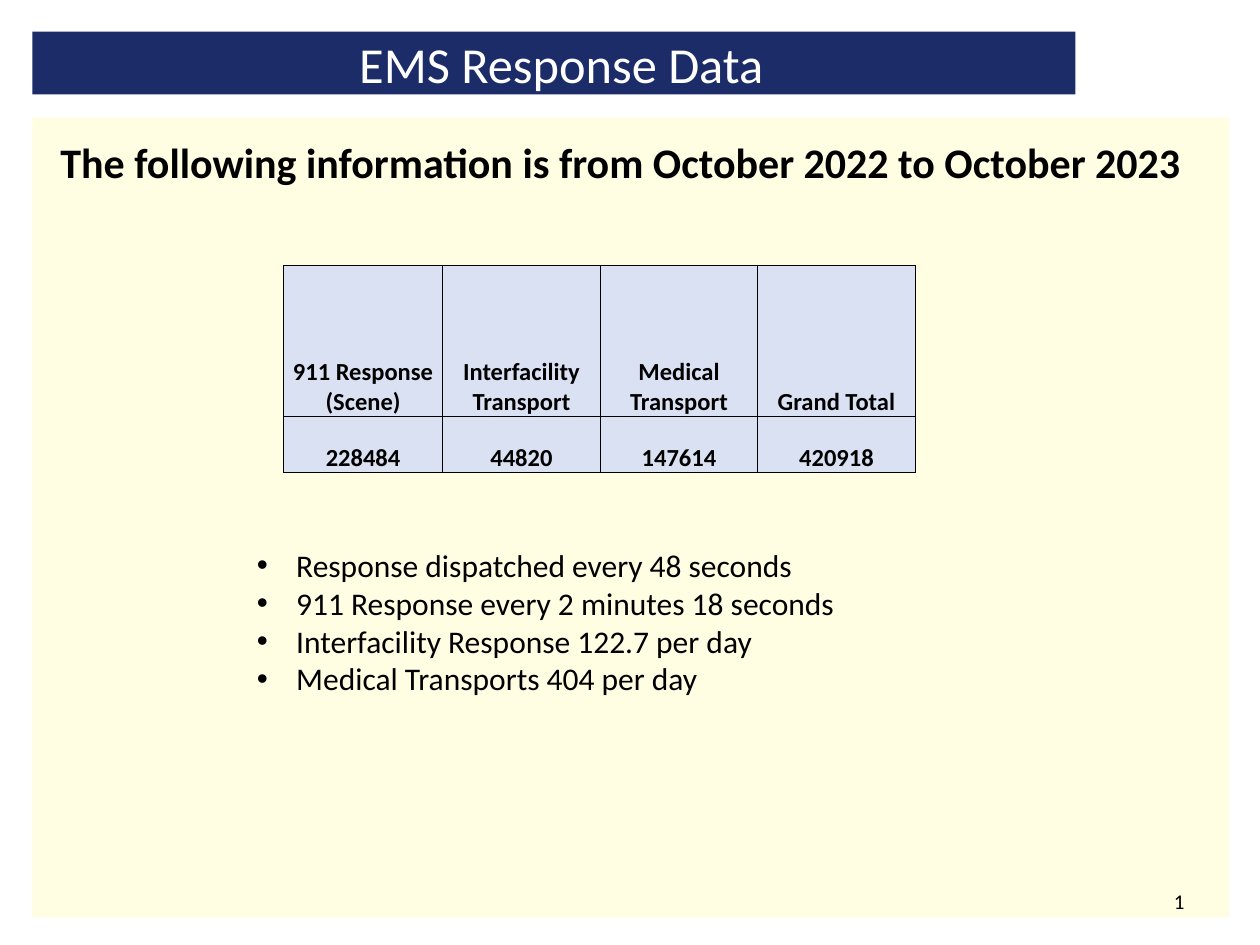
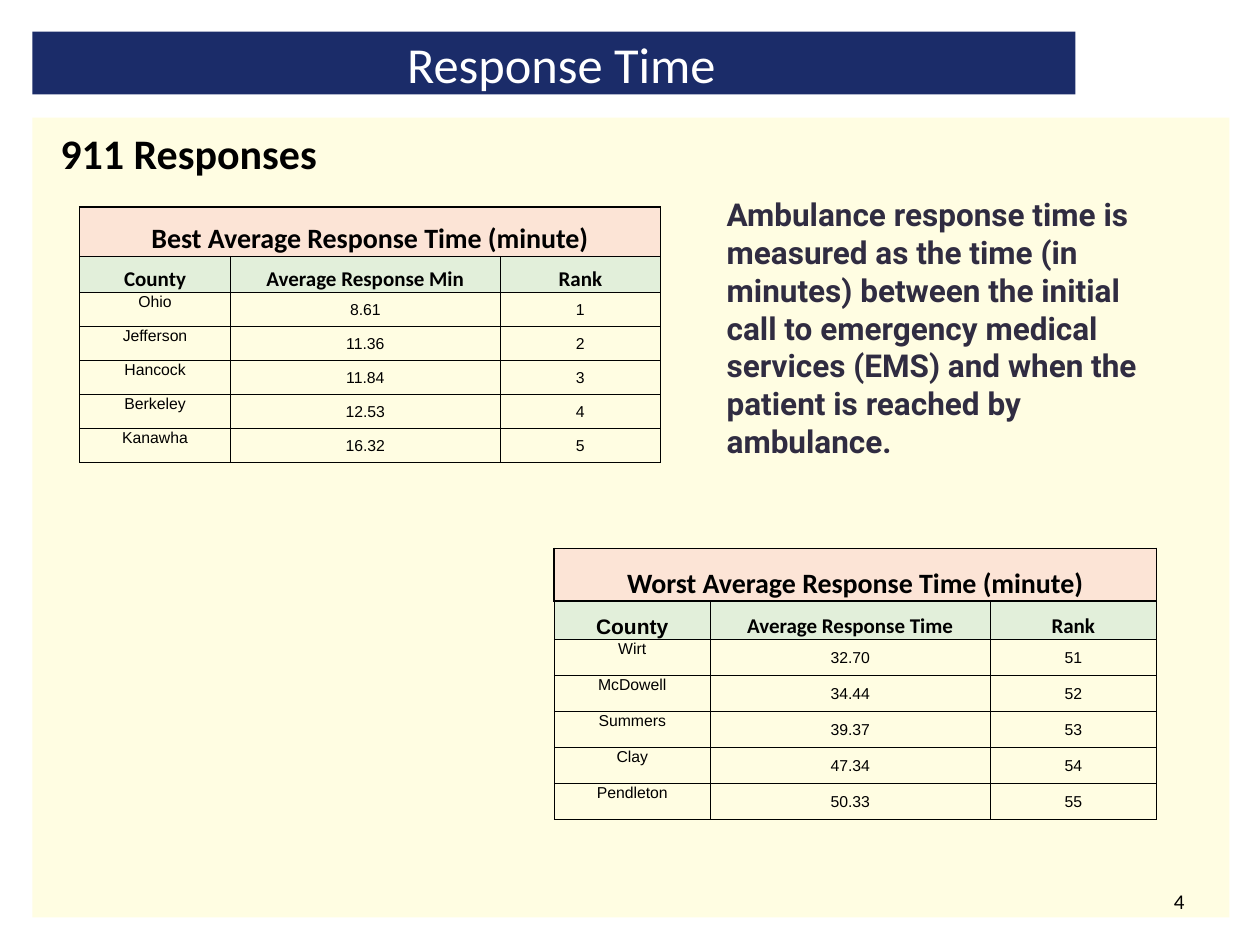
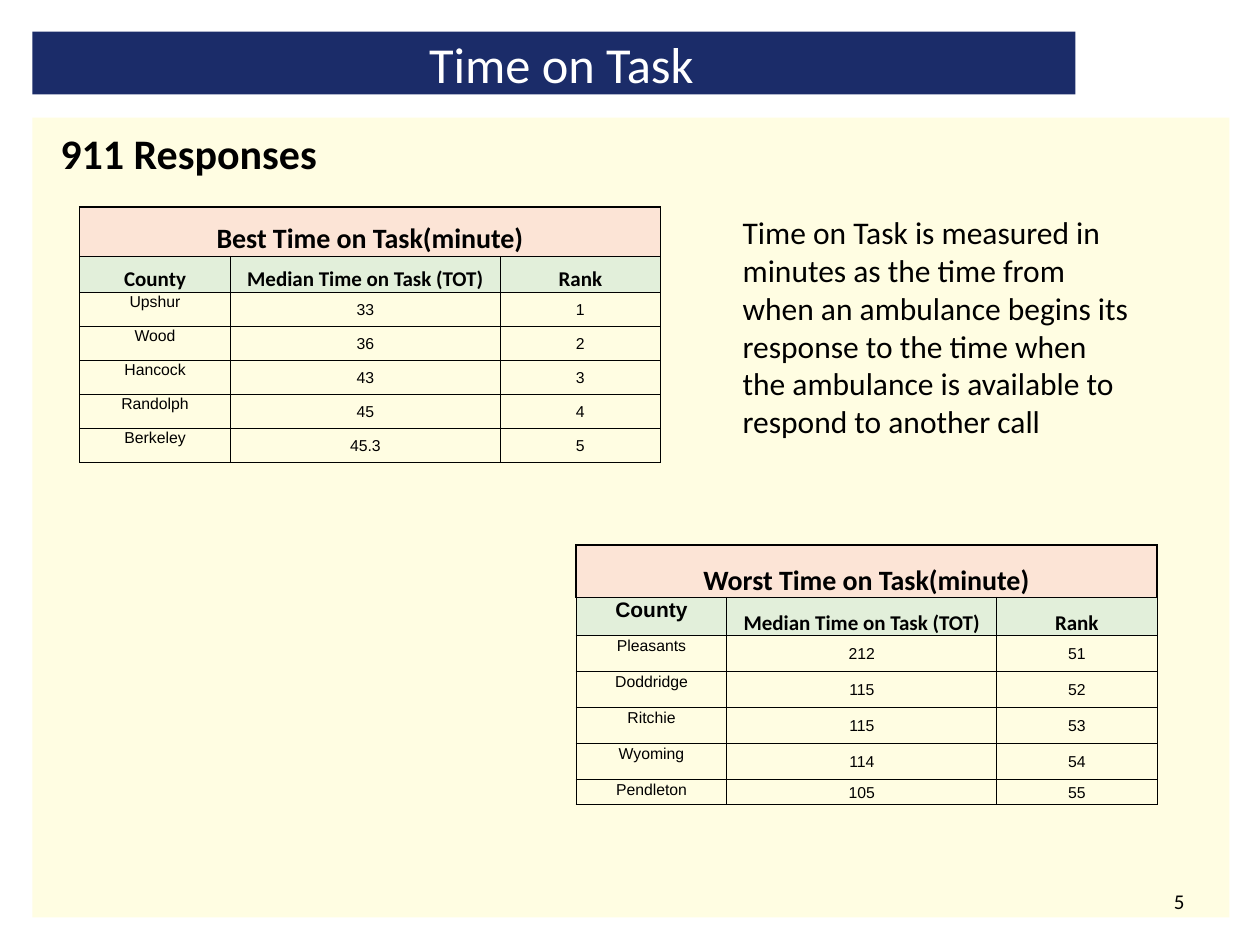
import lxml.etree
import pptx
import pptx.dml.color
import pptx.enum.shapes
import pptx.enum.text
import pptx.oxml.ns
import pptx.util

Pt = pptx.util.Pt
ALIGN = pptx.enum.text.PP_ALIGN
ANCHOR = pptx.enum.text.MSO_ANCHOR

NAVY, CREAM, WHITE, BLACK, INK = "1B2C69", "FFFDE2", "FFFFFF", "000000", "302C41"
TOTALS_BLUE, CAPTION_PEACH, HEADER_GREEN = "D9E1F2", "FCE4D6", "E2EFDA"
THIN, THICK = 0.5, 1


def color(hex_string):
    return pptx.dml.color.RGBColor.from_string(hex_string)


def add_xml(parent, tag, **attributes):
    return lxml.etree.SubElement(parent, pptx.oxml.ns.qn(tag), attributes)


def set_indent(paragraph, left, first_line=0, bullet=None):
    properties = paragraph._p.get_or_add_pPr()
    properties.set("marL", str(Pt(left)))
    properties.set("indent", str(Pt(first_line)))
    if bullet:
        add_xml(properties, "a:buFont", typeface="Arial")
        add_xml(properties, "a:buChar", char=bullet)
    else:
        add_xml(properties, "a:buNone")


def format_text(text_frame, size, font="Calibri", ink=BLACK, bold=False, align=ALIGN.LEFT):
    for paragraph in text_frame.paragraphs:
        paragraph.alignment = align
        for run in paragraph.runs:
            run.font.size = Pt(size)
            run.font.name = font
            run.font.bold = bold
            run.font.color.rgb = color(ink)


def set_insets(text_frame):
    """Remove the insets and keep the text at its own size."""
    text_frame.margin_left = text_frame.margin_right = 0
    text_frame.margin_top = text_frame.margin_bottom = 0
    text_frame.auto_size = pptx.enum.text.MSO_AUTO_SIZE.NONE


def place(shape, left, top, width, height):
    shape.left, shape.top = Pt(left), Pt(top)
    shape.width, shape.height = Pt(width), Pt(height)


def set_borders(cell, left=THIN, right=THIN, top=THIN, bottom=THIN):
    properties = cell._tc.get_or_add_tcPr()
    for side, width in zip("LRTB", (left, right, top, bottom)):
        line = add_xml(properties, f"a:ln{side}", w=str(Pt(width)))
        add_xml(add_xml(line, "a:solidFill"), "a:srgbClr", val=BLACK)


class Deck:
    """Holds the shared style and the current slide."""

    def __init__(self):
        self.presentation = pptx.Presentation()
        self.presentation.slide_width = Pt(720)
        self.presentation.slide_height = Pt(540)
        self.slide = None

    def add_slide(self, title, heading, heading_top, number):
        layout = self.presentation.slide_layouts[1]
        self.slide = self.presentation.slides.add_slide(layout)
        self.add_panel()
        self.set_title(title)
        self.set_heading(heading, heading_top)
        self.add_text([number], (516, 500.4, 168, 28.8), size=12,
                      align=ALIGN.RIGHT, anchor=ANCHOR.MIDDLE)

    def add_panel(self):
        """Lay the cream panel behind the placeholders."""
        panel = self.slide.shapes.add_shape(
            pptx.enum.shapes.MSO_SHAPE.RECTANGLE, Pt(18.5), Pt(67.2), Pt(684), Pt(457))
        panel.shadow.inherit = False
        panel.fill.solid()
        panel.fill.fore_color.rgb = color(CREAM)
        panel.line.fill.background()
        self.slide.shapes.title.element.addprevious(panel.element)

    def set_title(self, text):
        title = self.slide.shapes.title
        place(title, 18.5, 18, 596, 36)
        title.fill.solid()
        title.fill.fore_color.rgb = color(NAVY)
        text_frame = title.text_frame
        text_frame.text = text
        set_insets(text_frame)
        text_frame.vertical_anchor = ANCHOR.MIDDLE
        set_indent(text_frame.paragraphs[0], 8.6)
        format_text(text_frame, 28.8, ink=WHITE, align=ALIGN.CENTER)

    def set_heading(self, text, top):
        body = self.slide.placeholders[1]
        place(body, 34.5, top, 648, 409)
        text_frame = body.text_frame
        text_frame.text = text
        set_insets(text_frame)
        paragraph = text_frame.paragraphs[0]
        set_indent(paragraph, 0)
        paragraph.space_before = Pt(0)
        format_text(text_frame, 24, bold=True)

    def add_text(self, lines, box, size=18, bullet=None, anchor=ANCHOR.TOP, **style):
        text_frame = self.slide.shapes.add_textbox(*map(Pt, box)).text_frame
        text_frame.word_wrap = True
        text_frame.vertical_anchor = anchor
        text_frame.text = "\n".join(lines)
        if bullet:
            for paragraph in text_frame.paragraphs:
                set_indent(paragraph, 22.5, -22.5, bullet)
        format_text(text_frame, size, **style)

    def add_table(self, left, top, columns, rows):
        frame = self.slide.shapes.add_table(
            len(rows), len(columns), Pt(left), Pt(top), Pt(sum(columns)), Pt(sum(rows)))
        table = frame.table
        table.first_row = table.horz_banding = False
        for column, width in zip(table.columns, columns):
            column.width = Pt(width)
        for row, height in zip(table.rows, rows):
            row.height = Pt(height)
        return table

    def fill_cell(self, cell, text, size, fill=None, anchor=ANCHOR.BOTTOM,
                  font="Calibri", bold=True, **borders):
        cell.text = text
        cell.margin_left = cell.margin_right = cell.margin_top = Pt(0.7)
        cell.margin_bottom = 0
        cell.vertical_anchor = anchor
        set_borders(cell, **borders)
        if fill:
            cell.fill.solid()
            cell.fill.fore_color.rgb = color(fill)
        else:
            cell.fill.background()
        format_text(cell.text_frame, size, font, bold=bold, align=ALIGN.CENTER)

    def add_totals(self, records):
        table = self.add_table(162, 151.8, [91, 90, 90, 90], [86.4, 32])
        for row, record in enumerate(records):
            for column, text in enumerate(record):
                self.fill_cell(table.cell(row, column), text, 14, TOTALS_BLUE)

    def add_ranking(self, left, top, columns, rows, caption, measure, records,
                    rule=THIN, county_font="Calibri", county_anchor=ANCHOR.BOTTOM):
        """Add a captioned county table; rule is the line under the caption."""
        table = self.add_table(left, top, columns, rows)
        table.cell(0, 0).merge(table.cell(0, 2))
        for column, text in enumerate((caption, "", "")):
            self.fill_cell(table.cell(0, column), text, 16, CAPTION_PEACH,
                           left=THICK, right=THICK, top=THICK, bottom=rule)
        self.fill_cell(table.cell(1, 0), "County", 12, HEADER_GREEN,
                       county_anchor, county_font, top=rule)
        for column, text in enumerate((measure, "Rank"), 1):
            self.fill_cell(table.cell(1, column), text, 12, HEADER_GREEN, top=rule)
        for row, record in enumerate(records, 2):
            for column, text in enumerate(record):
                self.fill_cell(table.cell(row, column), text, 9, font="Arial", bold=False,
                               anchor=ANCHOR.MIDDLE if column else ANCHOR.TOP)

    def add_best(self, caption, measure, records):
        self.add_ranking(45.5, 118.3, COUNTY_COLUMNS, [28.2, 20.5] + [19.45] * 5,
                         caption, measure, records)

    def add_worst(self, left, top, columns, last_row, caption, measure, records, **style):
        self.add_ranking(left, top, columns, [30.2, 21.8] + [20.6] * 4 + [last_row],
                         caption, measure, records, rule=THICK, county_font="Arial", **style)


COUNTY_COLUMNS = [86.2, 154.2, 91.6]


def build_response_data(deck):
    deck.add_slide("EMS Response Data",
                   "The following information is from October 2022 to October 2023", 78, "1")
    deck.add_totals([
        ("911 Response (Scene)", "Interfacility Transport", "Medical Transport", "Grand Total"),
        ("228484", "44820", "147614", "420918")])
    deck.add_text(["Response dispatched every 48 seconds",
                   "911 Response every 2 minutes 18 seconds",
                   "Interfacility Response 122.7 per day",
                   "Medical Transports 404 per day"],
                  (139.7, 308.5, 486, 94.5), bullet="•")


def build_response_time(deck):
    deck.add_slide("Response Time", "911 Responses", 73, "4")
    deck.add_best("Best Average Response Time (minute)", "Average Response Min", [
        ("Ohio", "8.61", "1"),
        ("Jefferson", "11.36", "2"),
        ("Hancock", "11.84", "3"),
        ("Berkeley", "12.53", "4"),
        ("Kanawha", "16.32", "5")])
    deck.add_worst(316.7, 313.3, [89.2, 160, 95], 20.6,
                   "Worst Average Response Time (minute)", "Average Response Time", [
                       ("Wirt", "32.70", "51"),
                       ("McDowell", "34.44", "52"),
                       ("Summers", "39.37", "53"),
                       ("Clay", "47.34", "54"),
                       ("Pendleton", "50.33", "55")])
    deck.add_text(["Ambulance response time is measured as the time (in minutes) between the "
                   "initial call to emergency medical services (EMS) and when the patient is "
                   "reached by ambulance."],
                  (408.2, 108, 252, 165.6), font="Roboto", ink=INK, bold=True)


def build_time_on_task(deck):
    measure = "Median Time on Task (TOT)"
    deck.add_slide("Time on Task", "911 Responses", 73, "5")
    deck.add_best("Best Time on Task(minute)", measure, [
        ("Upshur", "33", "1"),
        ("Wood", "36", "2"),
        ("Hancock", "43", "3"),
        ("Randolph", "45", "4"),
        ("Berkeley", "45.3", "5")])
    deck.add_worst(329.2, 311.3, COUNTY_COLUMNS, 14, "Worst Time on Task(minute)", measure, [
        ("Pleasants", "212", "51"),
        ("Doddridge", "115", "52"),
        ("Ritchie", "115", "53"),
        ("Wyoming", "114", "54"),
        ("Pendleton", "105", "55")], county_anchor=ANCHOR.TOP)
    deck.add_text(["Time on Task is measured in minutes as the time from when an ambulance "
                   "begins its response to the time when the ambulance is available to "
                   "respond to another call"],
                  (417.3, 118.3, 238.3, 138.2))


def main():
    deck = Deck()
    build_response_data(deck)
    build_response_time(deck)
    build_time_on_task(deck)
    deck.presentation.save("out.pptx")


if __name__ == "__main__":
    main()
